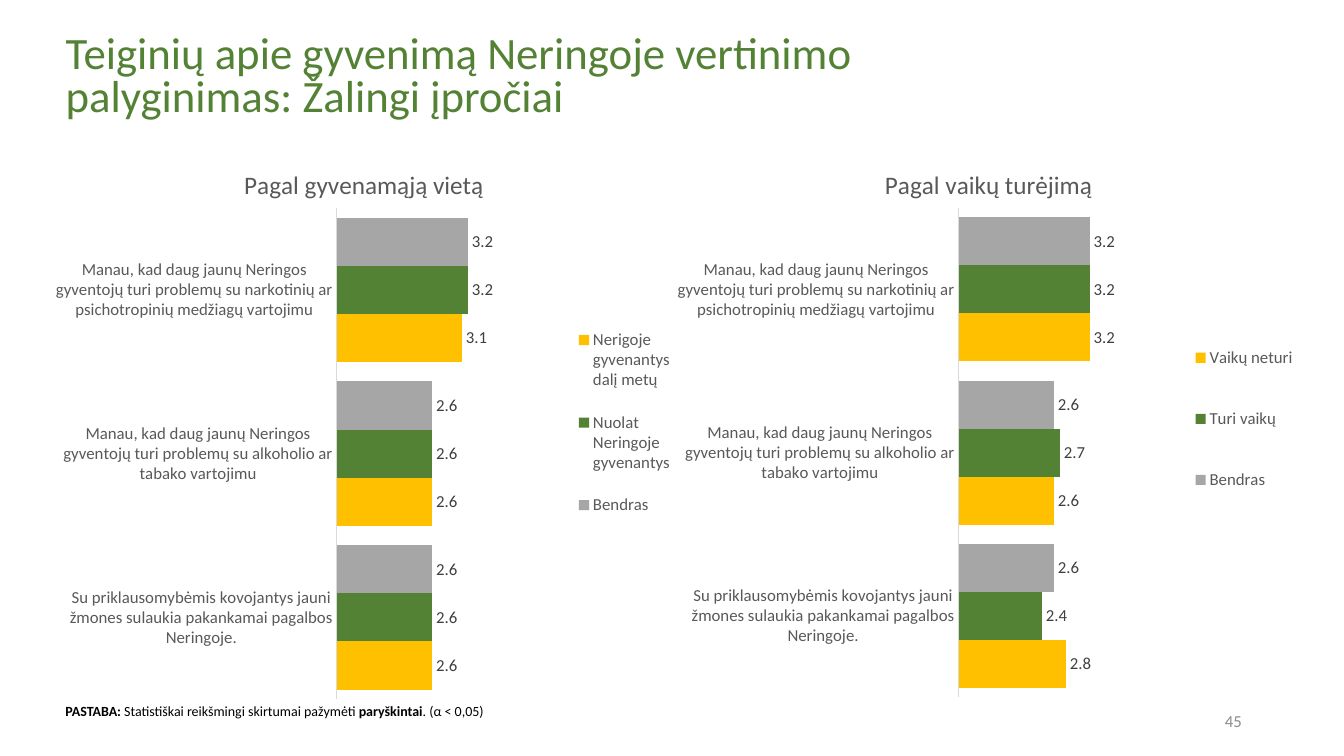
from lxml import etree
from pptx import Presentation
from pptx.chart.data import CategoryChartData
from pptx.dml.color import RGBColor
from pptx.enum.chart import (XL_CHART_TYPE, XL_LABEL_POSITION,
                             XL_LEGEND_POSITION, XL_TICK_MARK)
from pptx.enum.text import MSO_ANCHOR, MSO_AUTO_SIZE, PP_ALIGN
from pptx.oxml.ns import qn
from pptx.util import Cm, Pt

BAR = XL_CHART_TYPE.BAR_CLUSTERED
OUT_END = XL_LABEL_POSITION.OUTSIDE_END
RIGHT = XL_LEGEND_POSITION.RIGHT
NO_TICK = XL_TICK_MARK.NONE

BLACK = RGBColor(0x00, 0x00, 0x00)
DARK = RGBColor(0x40, 0x40, 0x40)
GREY = RGBColor(0x59, 0x59, 0x59)
PALE = RGBColor(0x8C, 0x8C, 0x8C)
RULE = RGBColor(0xD9, 0xD9, 0xD9)
SILVER = RGBColor(0xA6, 0xA6, 0xA6)
GREEN = RGBColor(0x54, 0x82, 0x35)
GOLD = RGBColor(0xFF, 0xC0, 0x00)
FONT = "Calibri"
FORMAT = "#,##0.0"

TITLE = ("Teiginių apie gyvenimą Neringoje vertinimo "
         "palyginimas: Žalingi įpročiai")
CLAIMS = [
    "Manau, kad daug jaunų Neringos gyventojų turi problemų su narkotinių "
    "ar psichotropinių medžiagų vartojimu",
    "Manau, kad daug jaunų Neringos gyventojų turi problemų su alkoholio "
    "ar tabako vartojimu",
    "Su priklausomybėmis kovojantys jauni žmones sulaukia pakankamai "
    "pagalbos Neringoje.",
]
COLORS = [SILVER, GREEN, GOLD]
CHARTS = [
    {"title": "Pagal gyvenamąją vietą", "left": 1.27, "high": 14.53,
     "head": (0.3, 0.04), "key": (0.83, 0.29, 0.16, 0.4),
     "rows": [("Bendras", (3.2, 2.6, 2.6)),
              ("Nuolat Neringoje gyvenantys", (3.2, 2.6, 2.6)),
              ("Nerigoje gyvenantys dalį metų", (3.1, 2.6, 2.6))]},
    {"title": "Pagal vaikų turėjimą", "left": 16.94, "high": 14.48,
     "head": (0.33, 0.04), "key": (0.83, 0.29, 0.16, 0.39),
     "rows": [("Bendras", (3.2, 2.6, 2.6)),
              ("Turi vaikų", (3.2, 2.7, 2.4)),
              ("Vaikų neturi", (3.2, 2.6, 2.8))]},
]
PLOT = (0.454, 0.118, 0.378, 0.852)
NOTE = [("PASTABA:", True),
        (" Statistiškai reikšmingi skirtumai pažymėti ", False),
        ("paryškintai", True), (". (α < 0,05)", False)]
PAGE = [("45", False)]


def style(font, size, color, bold=False):
    font.name, font.size, font.bold = FONT, Pt(size), bold
    font.color.rgb = color


def write(frame, runs, size, color, align):
    frame.word_wrap = True
    par = frame.paragraphs[0]
    par.alignment = align
    for text, bold in runs:
        run = par.add_run()
        run.text = text
        style(run.font, size, color, bold)
    return par


def add_text(slide, box, runs, size, color, align):
    shape = slide.shapes.add_textbox(*map(Cm, box))
    write(shape.text_frame, runs, size, color, align)
    return shape.text_frame


def place(node, index, spots, inner=False):
    """Give a chart part a fixed place, in fractions of the chart."""
    for old in node.findall(qn("c:layout")):
        node.remove(old)
    layout = etree.Element(qn("c:layout"))
    manual = etree.SubElement(layout, qn("c:manualLayout"))
    items = [("layoutTarget", "inner")] if inner else []
    items += [("xMode", "edge"), ("yMode", "edge")]
    items += zip("xywh", map(str, spots))
    for tag, val in items:
        etree.SubElement(manual, qn("c:" + tag)).set("val", val)
    node.insert(index, layout)


def add_bars(slide, item):
    data = CategoryChartData(number_format=FORMAT)
    data.categories = CLAIMS
    for name, vals in item["rows"]:
        data.add_series(name, vals)
    box = map(Cm, (item["left"], 3.53, 15.9, item["high"]))
    chart = slide.shapes.add_chart(BAR, *box, data).chart
    style(chart.font, 10, BLACK)

    chart.has_title = True
    head = chart.chart_title
    write(head.text_frame, [(item["title"], False)], 18, GREY,
          PP_ALIGN.CENTER)

    chart.has_legend = True
    key = chart.legend
    key.position = RIGHT
    key.include_in_layout = False
    style(key.font, 12, GREY)

    axis = chart.category_axis
    axis.reverse_order = True
    axis.major_tick_mark = axis.minor_tick_mark = NO_TICK
    axis.format.line.color.rgb = RULE
    axis.format.line.width = Pt(0.75)
    style(axis.tick_labels.font, 12, GREY)
    scale = chart.value_axis
    scale.minimum_scale, scale.maximum_scale = 1, 5
    scale.has_major_gridlines = False
    scale.visible = False

    plot = chart.plots[0]
    plot.gap_width, plot.overlap = 40, 0
    plot.vary_by_categories = False
    for series, color in zip(plot.series, COLORS):
        series.format.fill.solid()
        series.format.fill.fore_color.rgb = color
        labels = series.data_labels
        labels.show_value = True
        labels.position = OUT_END
        labels.number_format = FORMAT
        labels.number_format_is_linked = False
        style(labels.font, 12, DARK)

    root = chart.element
    place(root.find(".//" + qn("c:title")), 1, item["head"])
    place(root.find(".//" + qn("c:legend")), 1, item["key"])
    place(root.find(".//" + qn("c:plotArea")), 0, PLOT, inner=True)


def main():
    deck = Presentation()
    deck.slide_width, deck.slide_height = Cm(33.87), Cm(19.05)
    slide = deck.slides.add_slide(deck.slide_layouts[5])
    title = slide.shapes.title
    title.left, title.top, title.width, title.height = map(
        Cm, (1.4, 0.66, 25.9, 2.62))
    frame = title.text_frame
    frame.auto_size = MSO_AUTO_SIZE.NONE
    frame.vertical_anchor = MSO_ANCHOR.MIDDLE
    par = write(frame, [(TITLE, False)], 32, GREEN, PP_ALIGN.LEFT)
    par.line_spacing = 0.8

    for item in CHARTS:
        add_bars(slide, item)
    add_text(slide, (1.4, 17.58, 28.55, 0.69), NOTE, 10, BLACK,
             PP_ALIGN.JUSTIFY)
    page = add_text(slide, (23.93, 17.65, 7.62, 1.02), PAGE, 12, PALE,
                    PP_ALIGN.RIGHT)
    page.vertical_anchor = MSO_ANCHOR.MIDDLE
    deck.save("out.pptx")


if __name__ == "__main__":
    main()
